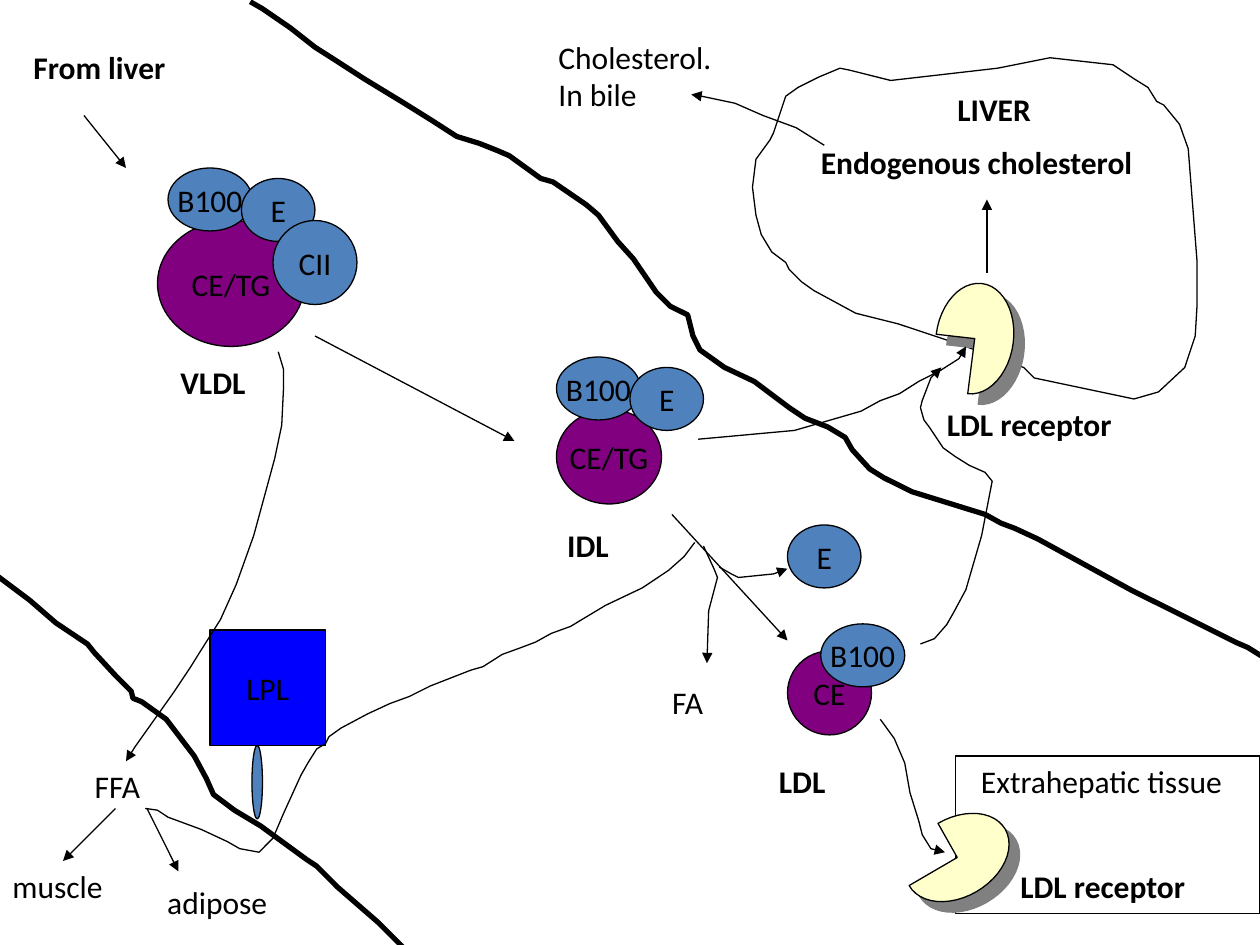
from math import cos, pi, sin
from typing import NamedTuple

from lxml.etree import SubElement
from pptx import Presentation
from pptx.dml.color import RGBColor
from pptx.enum.shapes import MSO_CONNECTOR as Link, MSO_SHAPE as Kind
from pptx.enum.text import MSO_ANCHOR as Anchor, PP_ALIGN as Align
from pptx.oxml.ns import qn
from pptx.util import Pt

BLACK, BLUE, PURPLE = "000000", "4F81BD", "800080"
CREAM, GREY, LPL = "FFFFCC", "808080", "0000FF"
Point = tuple[float, float]


class Node(NamedTuple):
    text: str
    left: float
    top: float
    width: float
    height: float
    fill: str | None = BLUE
    kind: Kind = Kind.OVAL


class Label(NamedTuple):
    text: str
    left: float
    top: float
    width: float
    bold: bool = False
    height: float = 29


class Curve(NamedTuple):
    points: list[Point]
    arrow: bool = True
    weight: float = 0.75


class Arrow(NamedTuple):
    start: Point
    end: Point


class Mouth(NamedTuple):
    """A three-quarter ellipse: its centre and its two half axes."""
    centre: Point
    first: Point
    second: Point


TISSUE = Node("", 546, 432, 174, 90, None, Kind.RECTANGLE)

NODES = [
    Node("CE/TG", 90, 126, 84, 72, PURPLE),
    Node("B100", 96, 96, 48, 36),
    Node("E", 138, 102, 42, 36),
    Node("CII", 156, 126, 48, 48),
    Node("", 144, 426, 6, 42),
    Node("LPL", 120, 360, 66, 66, LPL, Kind.RECTANGLE),
    Node("CE/TG", 318, 234, 60, 54, PURPLE),
    Node("B100", 318, 204, 48, 36),
    Node("E", 360, 210, 42, 36),
    Node("CE", 450, 372, 48, 48, PURPLE),
    Node("E", 450, 300, 42, 36),
    Node("B100", 469, 356.5, 48, 36),
]

LABELS = [
    Label("From liver", 12, 24, 101.5, True),
    Label("VLDL", 96, 204, 61, True),
    Label("IDL", 317, 297, 43, True),
    Label("LDL", 438, 432, 66, True),
    Label("LIVER", 540, 48, 68, True),
    Label("Endogenous cholesterol", 462, 78, 225, True),
    Label("LDL receptor", 534, 228, 127, True),
    Label("LDL receptor", 576, 492, 127, True),
    Label("FFA", 47, 435, 48),
    Label("FA", 377, 387, 37),
    Label("muscle", 0, 492, 71),
    Label("adipose", 88.5, 501, 78),
    Label("Extrahepatic tissue", 553.5, 432, 166, height=50),
    Label("Cholesterol.\nIn bile", 312, 18, 110, height=50),
]

ARROWS = [
    Arrow((48, 66), (72, 96)),
    Arrow((84, 462), (102, 498)),
    Arrow((66, 462), (36, 492)),
    Arrow((180, 192), (294, 252)),
    Arrow((384, 294), (450, 366)),
    Arrow((564, 156), (564, 114)),
]

MOUTHS = [
    Mouth((557, 193.5), (-4, 31.5), (22, 2.5)),
    Mouth((547, 490), (-27.5, 16), (11, 19.5)),
]

LIVER = Curve([
    (485, 40), (509, 46), (570, 39), (600, 33), (636, 37), (648, 45),
    (656, 50), (661, 58), (665, 60), (674, 71), (679, 85), (684, 149),
    (684, 175), (683, 192), (677, 210), (662, 224), (648, 228), (591, 216),
    (585, 210), (549, 197), (513, 185), (489, 179), (465, 166), (458, 161),
    (451, 154), (449, 150), (441, 144), (435, 134), (432, 123), (430, 107),
    (432, 91), (440, 80), (442, 76), (449, 55), (456, 50), (468, 44),
    (480, 39), (485, 40)], False)

VESSELS = [
    Curve([
        (143, 1), (150, 5), (166, 16), (180, 27), (191, 34), (208, 45),
        (231, 59), (247, 69), (261, 78), (274, 82), (284, 86), (291, 89),
        (309, 102), (316, 104), (335, 117), (342, 123), (353, 138),
        (362, 148), (375, 167), (383, 175), (393, 180), (396, 192),
        (400, 200), (414, 210), (431, 218), (451, 233), (460, 239),
        (473, 244), (483, 250), (487, 257), (497, 268), (505, 273),
        (521, 281), (563, 294), (572, 299), (580, 302), (593, 308),
        (646, 337), (664, 346), (690, 359), (706, 367), (713, 370),
        (729, 380), (736, 383)], False, 3),
    Curve([
        (-3, 328), (17, 343), (32, 356), (50, 368), (54, 373), (66, 386),
        (75, 395), (76, 399), (81, 401), (95, 411), (111, 432), (118, 445),
        (122, 454), (134, 463), (149, 472), (175, 491), (181, 495),
        (193, 507), (216, 527), (224, 535), (234, 545), (253, 557)],
        False, 3),
]

ROUTES = [
    Curve([(159, 201), (162, 211), (162, 222), (161, 243), (157, 262),
           (145, 306), (135, 334), (126, 354), (114, 373), (109, 381),
           (99, 396), (77, 427), (72, 435)]),
    Curve([(399, 251), (454, 246), (492, 235), (503, 229), (514, 225),
           (525, 218), (537, 212), (548, 205), (552, 198)]),
    Curve([(411, 324), (418, 328), (422, 330), (442, 328), (450, 325)]),
    Curve([(402, 312), (408, 325), (410, 330), (405, 349), (404, 379)]),
    Curve([(526, 368), (534, 365), (541, 357), (545, 350), (552, 337),
           (561, 306), (567, 275), (563, 270), (554, 266), (546, 261),
           (539, 256), (531, 244), (528, 240), (526, 233), (527, 229),
           (532, 216), (538, 210)]),
    Curve([(503, 411), (511, 422), (517, 436), (520, 453), (525, 469),
           (527, 477), (532, 485), (540, 487)]),
    Curve([(397, 310), (391, 318), (382, 326), (367, 336), (346, 346),
           (326, 358), (315, 362), (306, 367), (298, 370), (287, 374),
           (276, 381), (269, 383), (246, 392), (234, 398), (223, 402),
           (210, 408), (195, 416), (188, 421), (186, 425), (181, 428),
           (176, 436), (172, 443), (162, 465), (156, 479), (148, 487),
           (137, 485), (130, 481), (115, 474), (96, 467), (90, 463),
           (83, 462)], False),
    Curve([(471, 83), (455, 73), (436, 66), (420, 59), (401, 55), (395, 54)]),
]


def paint(form, code: str) -> None:
    form.solid()
    form.fore_color.rgb = RGBColor.from_string(code)


def style(shape, fill: str | None, weight: float = 0.75) -> None:
    shape.shadow.inherit = False
    if fill:
        paint(shape.fill, fill)
    else:
        shape.fill.background()
    paint(shape.line.fill, BLACK)
    shape.line.width = Pt(weight)


def tip(shape) -> None:
    """Put an arrowhead at the end of a line."""
    SubElement(shape._element.spPr.find(qn("a:ln")), qn("a:tailEnd"), type="triangle")


def write(shape, text: str, align: Align, bold: bool = False) -> None:
    frame = shape.text_frame
    frame.word_wrap = False
    frame.text = text
    for para in frame.paragraphs:
        para.alignment = align
        font = para.font
        font.name, font.size, font.bold = "Calibri", Pt(18), bold
        paint(font.fill, BLACK)


def add_node(shapes, node: Node) -> None:
    shape = shapes.add_shape(node.kind, *map(Pt, node[1:5]))
    style(shape, node.fill)
    if node.text:
        write(shape, node.text, Align.CENTER)
        shape.text_frame.vertical_anchor = Anchor.MIDDLE


def add_label(shapes, label: Label) -> None:
    box = shapes.add_textbox(Pt(label.left), Pt(label.top), Pt(label.width), Pt(label.height))
    write(box, label.text, Align.LEFT, label.bold)


def outline(shapes, points: list[Point], close: bool):
    start, *rest = [(Pt(x), Pt(y)) for x, y in points]
    form = shapes.build_freeform(*start)
    form.add_line_segments(rest, close=close)
    return form.convert_to_shape()


def add_curve(shapes, curve: Curve) -> None:
    shape = outline(shapes, curve.points, False)
    style(shape, None, curve.weight)
    if curve.arrow:
        tip(shape)


def add_arrow(shapes, arrow: Arrow) -> None:
    line = shapes.add_connector(Link.STRAIGHT, *map(Pt, arrow.start + arrow.end))
    paint(line.line.fill, BLACK)
    line.line.width = Pt(0.75)
    tip(line)
    SubElement(line._element.spPr, qn("a:effectLst"))


def add_mouth(shapes, mouth: Mouth, steps: int = 36) -> None:
    (x, y), (ax, ay), (bx, by) = mouth
    turns = [1.5 * pi * i / steps for i in range(steps + 1)]
    arc = [(x + ax * cos(t) + bx * sin(t), y + ay * cos(t) + by * sin(t)) for t in turns]
    shape = outline(shapes, arc + [mouth.centre], True)
    style(shape, CREAM)
    effects = shape._element.spPr.find(qn("a:effectLst"))
    shade = SubElement(effects, qn("a:outerShdw"), dist=str(Pt(8.5)),
                       dir="2700000", algn="ctr", rotWithShape="0")
    SubElement(shade, qn("a:srgbClr"), val=GREY)


def main() -> None:
    deck = Presentation()
    deck.slide_width, deck.slide_height = Pt(720), Pt(540)
    shapes = deck.slides.add_slide(deck.slide_layouts[6]).shapes
    layers = [
        (add_node, [TISSUE]), (add_curve, [LIVER]), (add_mouth, MOUTHS),
        (add_node, NODES), (add_curve, VESSELS + ROUTES),
        (add_arrow, ARROWS), (add_label, LABELS),
    ]
    for draw, items in layers:
        for item in items:
            draw(shapes, item)
    deck.save("out.pptx")


if __name__ == "__main__":
    main()
